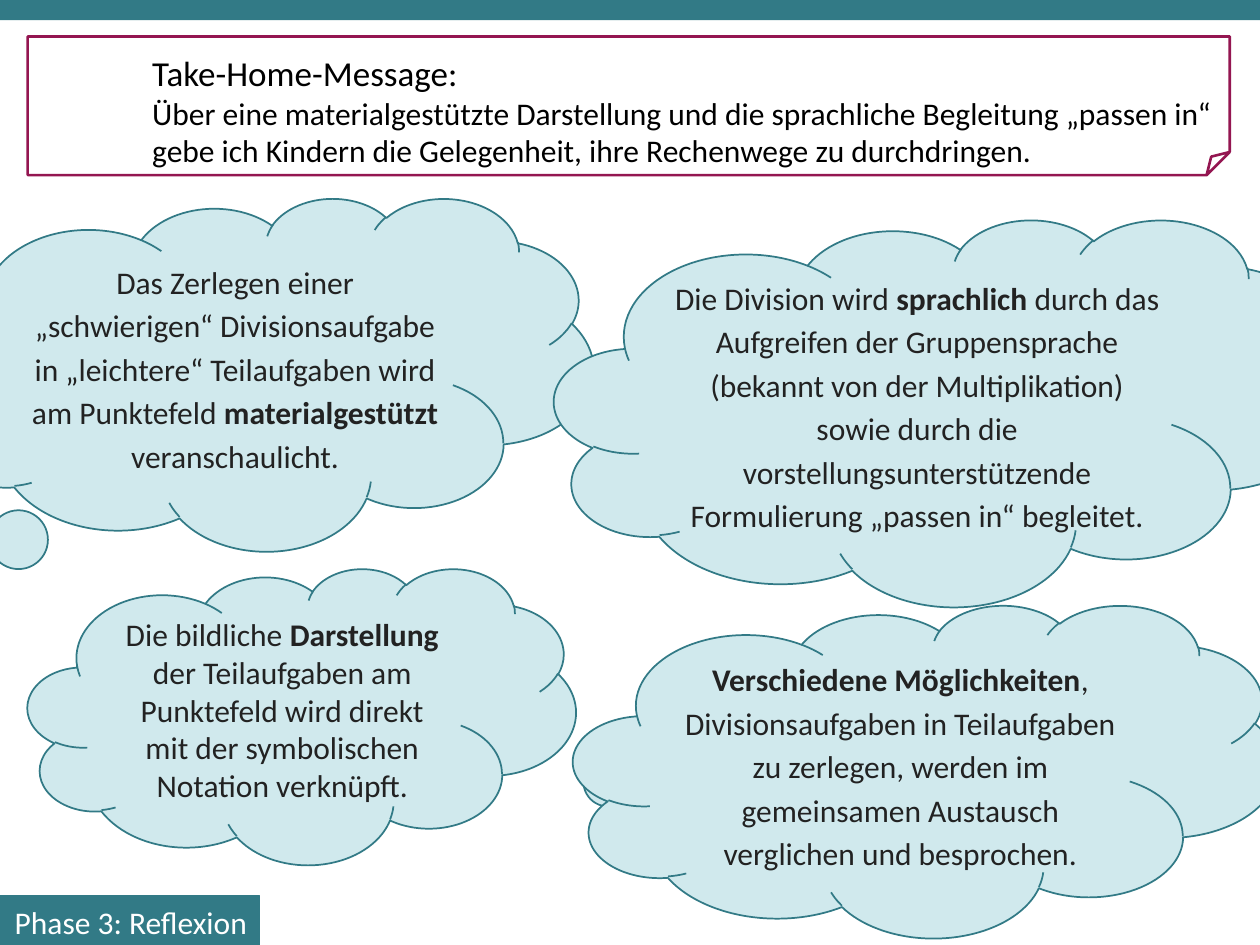
import pptx
import pptx.dml.color
import pptx.enum.shapes
import pptx.enum.text
import pptx.util

SHAPE = pptx.enum.shapes.MSO_SHAPE
ALIGN = pptx.enum.text.PP_ALIGN
ANCHOR = pptx.enum.text.MSO_ANCHOR
TEAL, PALE, BERRY, INK = "327A86", "D0E9ED", "941651", "222222"


def paint(color_format, hex_string):
    color_format.rgb = pptx.dml.color.RGBColor.from_string(hex_string)


def write(frame, text, size=18, color=INK, align=ALIGN.LEFT, spacing=1.0,
          anchor=ANCHOR.MIDDLE):
    """Lines become paragraphs; parts between asterisks are bold."""
    frame.word_wrap = True
    frame.vertical_anchor = anchor
    sizes = size if isinstance(size, tuple) else (size,)
    for number, (line, points) in enumerate(zip(text.split("\n"), sizes)):
        paragraph = frame.paragraphs[0] if number == 0 else frame.add_paragraph()
        paragraph.alignment = align
        paragraph.line_spacing = spacing
        for index, part in enumerate(line.split("*")):
            if part:
                run = paragraph.add_run()
                run.text = part
                run.font.name = "Calibri"
                run.font.size = pptx.util.Pt(points)
                run.font.bold = index % 2 == 1
                paint(run.font.color, color)


deck = pptx.Presentation()
deck.slide_width = pptx.util.Inches(10)
deck.slide_height = pptx.util.Inches(7.5)
slide = deck.slides.add_slide(deck.slide_layouts[6])

# Grid of 100 columns by 75 rows
col = deck.slide_width / 100
row = deck.slide_height / 75

# Message text
message = slide.shapes.add_textbox(
    int(11.1 * col), int(3.6 * row), int(86.5 * col), int(10.2 * row))
write(message.text_frame,
      "Take-Home-Message:\n"
      "Über eine materialgestützte Darstellung und die sprachliche Begleitung "
      "„passen in“ gebe ich Kindern die Gelegenheit, ihre Rechenwege zu durchdringen.",
      size=(20, 18), color="000000", anchor=ANCHOR.TOP)

# Top band, message frame, phase label and thought clouds:
# preset, grid place, fill, line, line width, tail, text, text format
label_format = dict(color="FFFFFF", align=ALIGN.RIGHT)
single = dict(align=ALIGN.CENTER)
loose = dict(align=ALIGN.CENTER, spacing=1.15)
cloud = (PALE, TEAL, 1)
tail_right = (0.776, 0.307)
parts = [
    (SHAPE.RECTANGLE, (0, 0, 100, 1.6), (TEAL, None, 0), None, "", {}),
    (SHAPE.FOLDED_CORNER, (2.2, 2.9, 95.4, 11), (None, BERRY, 1.5), None, "", {}),
    (SHAPE.RECTANGLE, (0, 71.1, 20.6, 4.1), (TEAL, TEAL, 0.75), None,
     "Phase 3: Reflexion", label_format),
    (SHAPE.CLOUD_CALLOUT, (-6, 15.7, 53.1, 28), cloud, (-0.494, 0.645),
     "Das Zerlegen einer „schwierigen“ Divisionsaufgabe in „leichtere“ "
     "Teilaufgaben wird am Punktefeld *materialgestützt* veranschaulicht.", loose),
    (SHAPE.CLOUD_CALLOUT, (44, 17.4, 62, 30.7), cloud, tail_right,
     "Die Division wird *sprachlich* durch das Aufgreifen der Gruppensprache "
     "(bekannt von der Multiplikation) sowie durch die vorstellungsunterstützende "
     "Formulierung „passen in“ begleitet.", loose),
    (SHAPE.CLOUD_CALLOUT, (2.2, 45.1, 43.5, 23.5), cloud, tail_right,
     "Die bildliche *Darstellung* der Teilaufgaben am Punktefeld wird direkt "
     "mit der symbolischen Notation verknüpft.", single),
    (SHAPE.CLOUD_CALLOUT, (45.5, 48, 55.9, 26.4), cloud, tail_right,
     "*Verschiedene Möglichkeiten*, Divisionsaufgaben in Teilaufgaben zu zerlegen, "
     "werden im gemeinsamen Austausch verglichen und besprochen.", loose),
]
for preset, (left, top, width, height), style, tail, text, text_format in parts:
    part = slide.shapes.add_shape(
        preset, int(left * col), int(top * row), int(width * col), int(height * row))
    part.shadow.inherit = False
    fill, line, weight = style
    if fill:
        part.fill.solid()
        paint(part.fill.fore_color, fill)
    else:
        part.fill.background()
    if line:
        paint(part.line.color, line)
        part.line.width = pptx.util.Pt(weight)
    else:
        part.line.fill.background()
    if tail:
        part.adjustments[0], part.adjustments[1] = tail
    if text:
        write(part.text_frame, text, **text_format)

deck.save("out.pptx")
